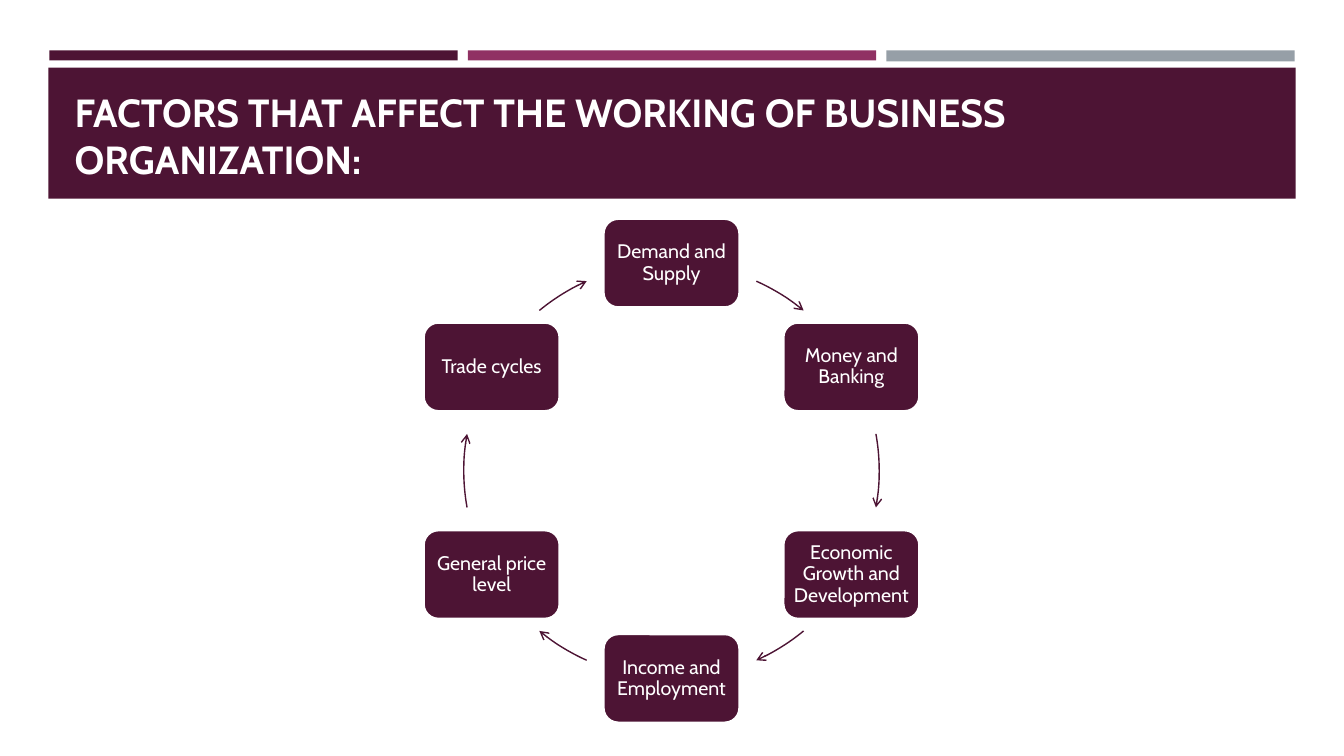
import math
from lxml import etree
from pptx import Presentation
from pptx.dml.color import RGBColor
from pptx.enum import shapes, text
from pptx.oxml.ns import qn
from pptx.util import Inches, Pt

# Content
TITLE = "FACTORS THAT AFFECT THE WORKING OF BUSINESS ORGANIZATION:"
FACTORS = ["Demand and Supply", "Money and Banking",
           "Economic Growth and Development", "Income and Employment",
           "General price level", "Trade cycles"]
# Start and end of each arrow, in degrees clockwise from the right
ARROWS = [(294.1, 309.5), (349.8, 10.2), (50.5, 65.9),
          (114.1, 129.5), (169.8, 190.2), (230.5, 245.9)]
FONT, PLUM, WHITE = "Cabin", "4D1434", "FFFFFF"
BANDS = [(0.49, 0.5, 4.05, 0.1, PLUM), (4.64, 0.5, 4.05, 0.1, "903163"),
         (8.79, 0.5, 4.05, 0.11, "969FA7"), (0.48, 0.67, 12.37, 1.3, PLUM)]

# Ring layout
MID_X, MID_Y, RADIUS = 6.66, 4.67, 2.06
BOX_W, BOX_H, INSET = 1.35, 0.88, 0.06
KIND = shapes.MSO_SHAPE


def color(code):
    return RGBColor.from_string(code)


def add_part(slide, kind, x, y, w, h, fill=None, line=None, width=1):
    part = slide.shapes.add_shape(kind, Inches(x), Inches(y), Inches(w), Inches(h))
    part.shadow.inherit = False
    if fill:
        part.fill.solid()
        part.fill.fore_color.rgb = color(fill)
    else:
        part.fill.background()
    if line:
        part.line.color.rgb = color(line)
        part.line.width = Pt(width)
    else:
        part.line.fill.background()
    return part


def write(frame, words, size, align, anchor, bold=False):
    frame.text = words
    frame.word_wrap = True
    frame.auto_size = text.MSO_AUTO_SIZE.NONE
    frame.vertical_anchor = anchor
    para = frame.paragraphs[0]
    para.alignment = align
    font = para.font
    font.name, font.size, font.bold = FONT, Pt(size), bold
    font.color.rgb = color(WHITE)
    return para


def add_title(slide):
    title = slide.shapes.title
    title.left, title.top = Inches(0.64), Inches(0.75)
    title.width, title.height = Inches(12.06), Inches(1.11)
    write(title.text_frame, TITLE, 28, text.PP_ALIGN.LEFT,
          text.MSO_ANCHOR.BOTTOM, bold=True)
    # Bring the title in front of its band
    title.element.getparent().append(title.element)


def add_box(slide, words, angle):
    x = MID_X + RADIUS * math.cos(angle) - BOX_W / 2
    y = MID_Y + RADIUS * math.sin(angle) - BOX_H / 2
    box = add_part(slide, KIND.ROUNDED_RECTANGLE, x, y, BOX_W, BOX_H,
                   PLUM, WHITE, 1.75)
    frame = box.text_frame
    frame.margin_left = frame.margin_right = Inches(INSET)
    frame.margin_top = frame.margin_bottom = Inches(INSET)
    para = write(frame, words, 14, text.PP_ALIGN.CENTER, text.MSO_ANCHOR.MIDDLE)
    para.line_spacing = 0.9


def add_arrow(slide, start, end):
    arc = add_part(slide, KIND.ARC, MID_X - RADIUS, MID_Y - RADIUS,
                   2 * RADIUS, 2 * RADIUS, line=PLUM)
    # Angles are stored in 60000ths of a degree, adjustments in 100000ths
    arc.adjustments[0], arc.adjustments[1] = start * 0.6, end * 0.6
    line = arc.element.spPr.find(qn("a:ln"))
    etree.SubElement(line, qn("a:tailEnd"), type="arrow")


def main():
    deck = Presentation()
    deck.slide_width, deck.slide_height = Inches(13.33), Inches(7.5)
    slide = deck.slides.add_slide(deck.slide_layouts[5])

    # Header
    for x, y, w, h, fill in BANDS:
        add_part(slide, KIND.RECTANGLE, x, y, w, h, fill)
    add_title(slide)

    # Cycle, clockwise from the top
    step = 2 * math.pi / len(FACTORS)
    for i, (words, (start, end)) in enumerate(zip(FACTORS, ARROWS)):
        add_box(slide, words, i * step - math.pi / 2)
        add_arrow(slide, start, end)

    deck.save("out.pptx")


if __name__ == "__main__":
    main()
